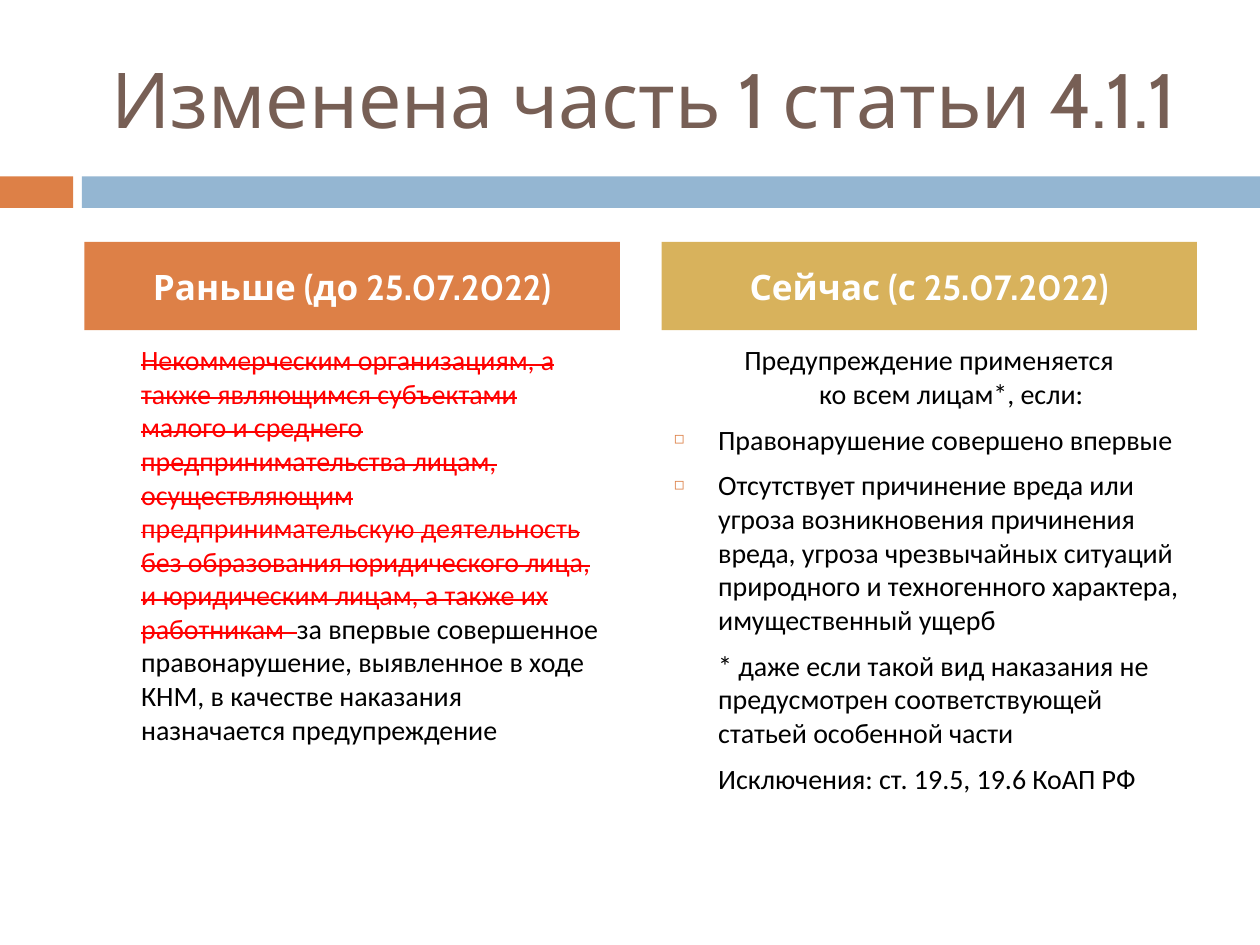
from dataclasses import dataclass

from lxml.etree import SubElement
from pptx import Presentation
from pptx.dml.color import RGBColor
from pptx.enum.shapes import MSO_SHAPE
from pptx.enum.text import MSO_ANCHOR, MSO_AUTO_SIZE, PP_ALIGN
from pptx.oxml.ns import qn
from pptx.util import Inches, Pt


@dataclass(frozen=True)
class Theme:
    orange: str = "DD8047"
    blue: str = "94B6D2"
    gold: str = "D8B25C"
    brown: str = "775F55"
    red: str = "FF0000"
    black: str = "000000"
    white: str = "FFFFFF"
    head_font: str = "Cabin"
    body_font: str = "Calibri"
    title_size: int = 44
    head_size: int = 20
    body_size: int = 16
    gap: int = 7
    indent: float = 0.35


@dataclass(frozen=True)
class Span:
    text: str
    struck: bool = False


@dataclass(frozen=True)
class Para:
    spans: tuple[Span, ...]
    bullet: bool = False
    centered: bool = False


@dataclass(frozen=True)
class Column:
    left: float
    fill: str
    heading: str
    paras: tuple[Para, ...]


T = Theme()
COL_W = 4.25

COLUMNS = (
    Column(0.67, T.orange, "Раньше (до 25.07.2022)", (
        Para((
            Span("Некоммерческим организациям, а также являющимся субъектами "
                 "малого и среднего предпринимательства лицам, осуществляющим "
                 "предпринимательскую деятельность без образования "
                 "юридического лица, и юридическим лицам, а также их "
                 "работникам  ", struck=True),
            Span("за впервые совершенное правонарушение, выявленное в ходе "
                 "КНМ, в качестве наказания назначается предупреждение"),
        )),
    )),
    Column(5.25, T.gold, "Сейчас (с 25.07.2022)", (
        Para((Span("Предупреждение применяется\nко всем лицам*, если:"),),
             centered=True),
        Para((Span("Правонарушение совершено впервые"),), bullet=True),
        Para((Span("Отсутствует причинение вреда или угроза возникновения "
                   "причинения вреда, угроза чрезвычайных ситуаций природного "
                   "и техногенного характера, имущественный ущерб"),),
             bullet=True),
        Para((Span("* даже если такой вид наказания не предусмотрен "
                   "соответствующей статьей особенной части"),)),
        Para((Span("Исключения: ст. 19.5, 19.6 КоАП РФ"),)),
    )),
)


def place(sp, left: float, top: float, width: float, height: float) -> None:
    sp.left, sp.top = Inches(left), Inches(top)
    sp.width, sp.height = Inches(width), Inches(height)


def paint(sp, color: str) -> None:
    sp.fill.solid()
    sp.fill.fore_color.rgb = RGBColor.from_string(color)


def prepare(sp, anchor: MSO_ANCHOR):
    tf = sp.text_frame
    tf.word_wrap = True
    tf.auto_size = MSO_AUTO_SIZE.NONE
    tf.vertical_anchor = anchor
    return tf


def add_run(p, text: str, size: int, font: str, color: str, bold: bool = False):
    r = p.add_run()
    r.text = text
    r.font.size, r.font.name, r.font.bold = Pt(size), font, bold
    r.font.color.rgb = RGBColor.from_string(color)
    return r


def set_indent(p, left: float, first: float, bullet: bool) -> None:
    pPr = p._p.get_or_add_pPr()
    pPr.set("marL", str(Inches(left)))
    pPr.set("indent", str(Inches(first)))
    if not bullet:
        SubElement(pPr, qn("a:buNone"))
        return
    clr = SubElement(pPr, qn("a:buClr"))
    SubElement(clr, qn("a:srgbClr")).set("val", T.orange)
    SubElement(pPr, qn("a:buSzPct")).set("val", "60000")
    SubElement(pPr, qn("a:buChar")).set("char", "◻")


def add_band(s, left: float, width: float, color: str) -> None:
    sp = s.shapes.add_shape(MSO_SHAPE.RECTANGLE, Inches(left), Inches(1.4),
                            Inches(width), Inches(0.25))
    sp.shadow.inherit = False
    paint(sp, color)
    sp.line.fill.background()


def fill_heading(sp, col: Column) -> None:
    place(sp, col.left, 1.92, COL_W, 0.7)
    paint(sp, col.fill)
    p = prepare(sp, MSO_ANCHOR.MIDDLE).paragraphs[0]
    p.alignment = PP_ALIGN.CENTER
    p.space_before = Pt(T.gap)
    set_indent(p, 0, 0, False)
    add_run(p, col.heading, T.head_size, T.head_font, T.white, bold=True)


def fill_body(sp, col: Column) -> None:
    place(sp, col.left, 2.67, COL_W, 3.92)
    tf = prepare(sp, MSO_ANCHOR.TOP)
    for i, para in enumerate(col.paras):
        p = tf.add_paragraph() if i else tf.paragraphs[0]
        p.alignment = PP_ALIGN.CENTER if para.centered else PP_ALIGN.LEFT
        p.space_before = Pt(T.gap)
        hanging = para.bullet or para.centered
        set_indent(p, T.indent, -T.indent if hanging else 0, para.bullet)
        for span in para.spans:
            for n, line in enumerate(span.text.split("\n")):
                if n:
                    p.add_line_break()
                r = add_run(p, line, T.body_size, T.body_font,
                            T.red if span.struck else T.black)
                if span.struck:
                    r.font._element.set("strike", "sngStrike")


def main() -> None:
    prs = Presentation()
    prs.slide_width, prs.slide_height = Inches(10), Inches(7.5)
    s = prs.slides.add_slide(prs.slide_layouts.get_by_name("Comparison"))

    # Divider under the title
    add_band(s, 0, 0.58, T.orange)
    add_band(s, 0.65, 9.35, T.blue)

    # Title
    title = s.shapes.title
    place(title, 0.58, 0.3, 8.92, 0.95)
    p = prepare(title, MSO_ANCHOR.MIDDLE).paragraphs[0]
    p.alignment = PP_ALIGN.CENTER
    add_run(p, " Изменена часть 1 статьи 4.1.1 ", T.title_size, T.head_font, T.brown)

    # Two columns: heading and body placeholders come in pairs
    for i, col in enumerate(COLUMNS):
        fill_heading(s.placeholders[2 * i + 1], col)
        fill_body(s.placeholders[2 * i + 2], col)

    prs.save("out.pptx")


if __name__ == "__main__":
    main()
